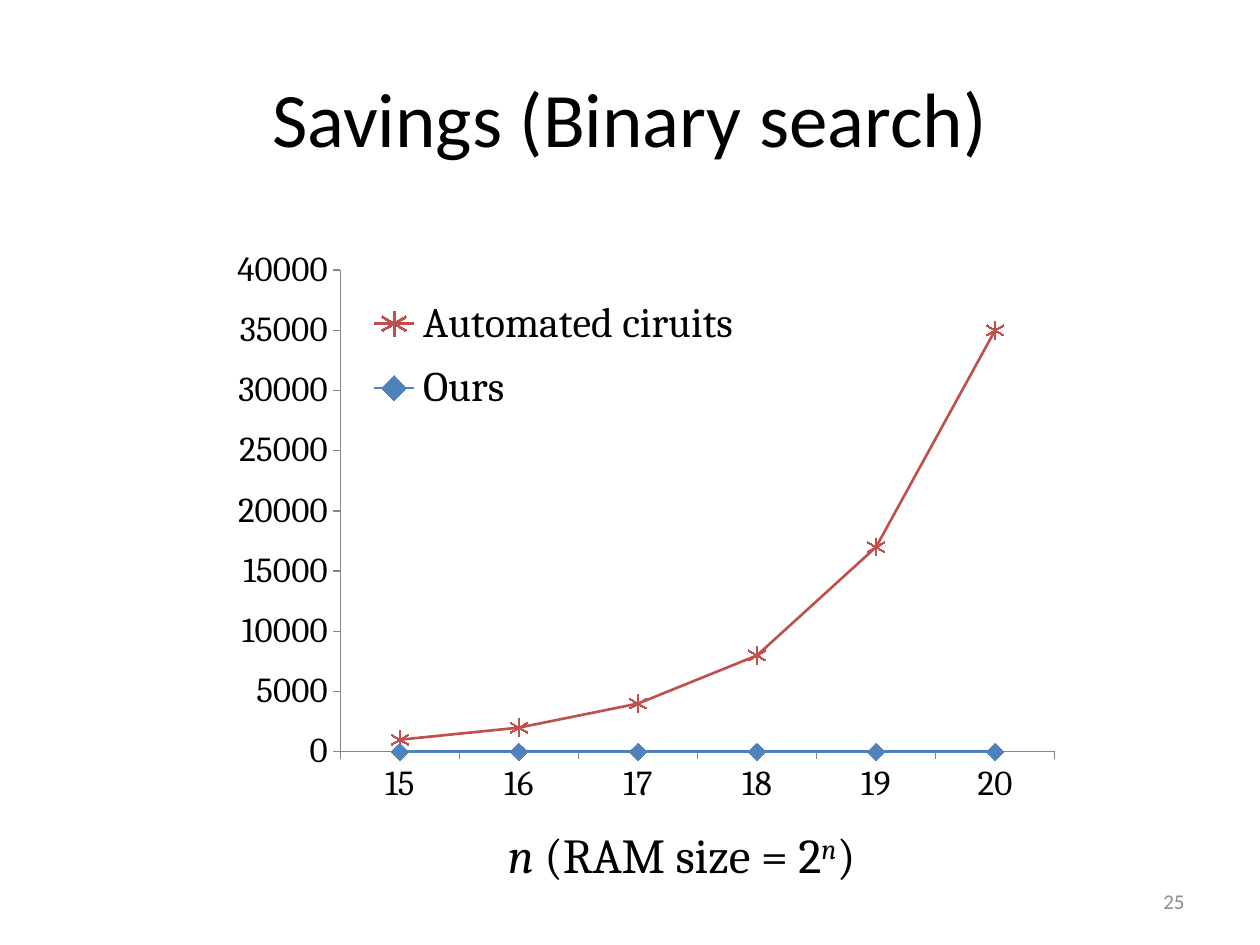
from lxml import etree
from pptx import Presentation
from pptx.chart.data import CategoryChartData
from pptx.dml.color import RGBColor
from pptx.enum.chart import XL_CHART_TYPE, XL_LEGEND_POSITION, XL_MARKER_STYLE, XL_TICK_MARK
from pptx.enum.text import MSO_ANCHOR, PP_ALIGN
from pptx.oxml.ns import qn
from pptx.util import Inches, Pt

LINE_MARKERS = XL_CHART_TYPE.LINE_MARKERS
LEGEND_RIGHT = XL_LEGEND_POSITION.RIGHT
STAR, DIAMOND = XL_MARKER_STYLE.STAR, XL_MARKER_STYLE.DIAMOND
TICK_OUTSIDE, TICK_NONE = XL_TICK_MARK.OUTSIDE, XL_TICK_MARK.NONE
MIDDLE = MSO_ANCHOR.MIDDLE
CENTER, RIGHT = PP_ALIGN.CENTER, PP_ALIGN.RIGHT

BLACK = RGBColor(0x00, 0x00, 0x00)
GRAY = RGBColor(0x8C, 0x8C, 0x8C)
AXIS_GRAY = RGBColor(0x86, 0x86, 0x86)
RED = RGBColor(0xC0, 0x50, 0x4D)
BLUE = RGBColor(0x4F, 0x81, 0xBD)

TEXTS = [
    ("Savings (Binary search)", (0.5, 0.3, 9, 1.25), 44, BLACK, CENTER),
    ("25", (7.17, 6.95, 2.33, 0.4), 12, GRAY, RIGHT),
]
RAM_EXPONENTS = ["15", "16", "17", "18", "19", "20"]
SERIES = [
    ("Automated ciruits", (1000, 2000, 4000, 8000, 17000, 35000), RED, STAR, False),
    ("Ours", (0, 0, 0, 0, 0, 0), BLUE, DIAMOND, True),
]
AXIS_TITLE = [("n", True, None), (" (RAM size = 2", False, None),
              ("n", True, "30000"), (")", False, None)]
CHART_BOX = (1.5, 1.83, 7.42, 5.25)
PLOT_SHARE = {"x": 0.162, "y": 0.06, "w": 0.764, "h": 0.73}
LEGEND_SHARE = {"x": 0.17, "y": 0.08, "w": 0.44, "h": 0.22}
TITLE_SHARE = {"x": 0.337, "y": 0.9}


def style_font(font, size, color, name):
    font.size, font.name = Pt(size), name
    font.color.rgb = color


def add_text(page, text, place, size, color, align):
    box = page.shapes.add_textbox(*map(Inches, place))
    frame = box.text_frame
    frame.word_wrap = True
    frame.vertical_anchor = MIDDLE
    frame.text = text
    para = frame.paragraphs[0]
    para.alignment = align
    style_font(para.runs[0].font, size, color, "Calibri")


def set_layout(element, position, shares, inner=False):
    for old in element.findall(qn("c:layout")):
        element.remove(old)
    layout = etree.Element(qn("c:layout"))
    manual = etree.SubElement(layout, qn("c:manualLayout"))
    settings = [("layoutTarget", "inner")] if inner else []
    settings += [("xMode", "edge"), ("yMode", "edge")]
    settings += [(key, str(share)) for key, share in shares.items()]
    for tag, setting in settings:
        etree.SubElement(manual, qn(f"c:{tag}")).set("val", setting)
    element.insert(position, layout)


def style_axis(axis):
    axis.has_major_gridlines = False
    axis.major_tick_mark = TICK_OUTSIDE
    axis.minor_tick_mark = TICK_NONE
    axis.format.line.color.rgb = AXIS_GRAY
    axis.format.line.width = Pt(0.75)
    style_font(axis.tick_labels.font, 20, BLACK, "Cambria")


def add_axis_title(axis):
    title = axis.axis_title
    para = title.text_frame.paragraphs[0]
    for text, italic, baseline in AXIS_TITLE:
        span = para.add_run()
        span.text = text
        style_font(span.font, 28, BLACK, "Cambria")
        span.font.bold, span.font.italic = False, italic
        if baseline:
            span.font._element.set("baseline", baseline)
    set_layout(title._element, 1, TITLE_SHARE)


def style_series(series, color, marker_style, filled):
    series.smooth = False
    series.marker.style, series.marker.size = marker_style, 10
    for line in (series.format.line, series.marker.format.line):
        line.color.rgb = color
    series.format.line.width = Pt(1.5)
    fill = series.marker.format.fill
    if filled:
        fill.solid()
        fill.fore_color.rgb = color
    else:
        fill.background()


def add_savings_chart(page):
    data = CategoryChartData()
    data.categories = RAM_EXPONENTS
    for name, values, *_ in SERIES:
        data.add_series(name, values)
    chart = page.shapes.add_chart(LINE_MARKERS, *map(Inches, CHART_BOX), data).chart
    style_font(chart.font, 10, BLACK, "Calibri")
    chart.has_title = False
    plot = chart.plots[0]
    plot.vary_by_categories = False
    for series, (_, _, color, marker_style, filled) in zip(plot.series, SERIES):
        style_series(series, color, marker_style, filled)

    style_axis(chart.category_axis)
    style_axis(chart.value_axis)
    chart.value_axis.minimum_scale = 0
    chart.value_axis.maximum_scale = 40000
    chart.value_axis.major_unit = 5000
    add_axis_title(chart.category_axis)

    chart.has_legend = True
    legend = chart.legend
    legend.position = LEGEND_RIGHT
    legend.include_in_layout = False
    style_font(legend.font, 24, BLACK, "Cambria")
    set_layout(legend._element, 1, LEGEND_SHARE)
    set_layout(plot._element.getparent(), 0, PLOT_SHARE, inner=True)


def main():
    deck = Presentation()
    deck.slide_width, deck.slide_height = Inches(10), Inches(7.5)
    page = deck.slides.add_slide(deck.slide_layouts[6])
    for entry in TEXTS:
        add_text(page, *entry)
    add_savings_chart(page)
    deck.save("out.pptx")


if __name__ == "__main__":
    main()
